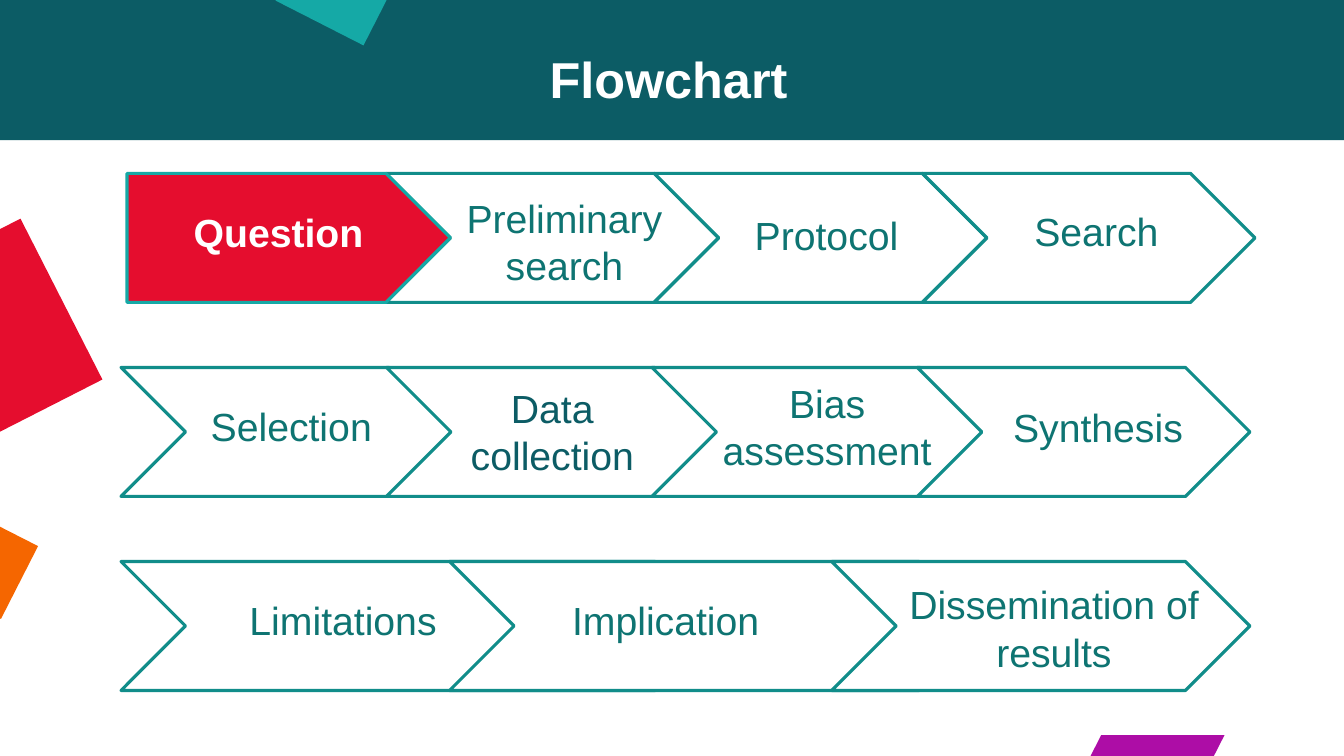
import pptx
import pptx.dml.color
import pptx.enum.shapes
import pptx.enum.text
import pptx.util

Cm = pptx.util.Cm
SHAPES = pptx.enum.shapes.MSO_SHAPE
TEXT = pptx.enum.text

COLORS = {
    "banner": "0C5C65",
    "red": "E50D2E",
    "purple": "AD0DA6",
    "orange": "F56600",
    "turquoise": "15A9A6",
    "outline": "118D8A",
    "label": "0E7472",
    "white": "FFFFFF",
}
FIRST_ROW_TOP, ROW_PITCH, STEP_HEIGHT = 4.37, 4.89, 3.25
STEP_WIDTH = 8.38


class FlowchartPage:
    """Holds the style and the current slide."""

    def __init__(self, deck, font="Arial"):
        self.font = font
        self.page = deck.slides.add_slide(deck.slide_layouts[5])

    def color(self, name):
        return pptx.dml.color.RGBColor.from_string(COLORS[name])

    def shape(self, kind, left, top, width, height, fill, line=None, rotation=0):
        shape = self.page.shapes.add_shape(
            kind, Cm(left), Cm(top), Cm(width), Cm(height))
        shape.shadow.inherit = False
        shape.rotation = rotation
        shape.fill.solid()
        shape.fill.fore_color.rgb = self.color(fill)
        if line:
            shape.line.color.rgb = self.color(line)
            shape.line.width = pptx.util.Pt(2.25)
        else:
            shape.line.fill.background()

    def format_text(self, box, text, size, color, bold=False):
        frame = box.text_frame
        frame.word_wrap = True
        frame.auto_size = TEXT.MSO_AUTO_SIZE.NONE
        frame.vertical_anchor = TEXT.MSO_ANCHOR.TOP
        para = frame.paragraphs[0]
        para.text = text
        para.alignment = TEXT.PP_ALIGN.CENTER
        for span in para.runs:
            span.font.name = self.font
            span.font.size = pptx.util.Pt(size)
            span.font.bold = bold
            span.font.color.rgb = self.color(color)
        return para

    def title(self, text, left, top, width, height):
        box = self.page.shapes.title
        box.left, box.top, box.width, box.height = map(Cm, (left, top, width, height))
        para = self.format_text(box, text, 36, "white", bold=True)
        para.line_spacing = 0.9
        # Bring the title in front of the banner
        box.element.getparent().append(box.element)

    def label(self, text, left, top, width, color="label", bold=False):
        box = self.page.shapes.add_textbox(Cm(left), Cm(top), Cm(width), Cm(1.45))
        self.format_text(box, text, 28, color, bold)

    def chevron(self, left, top, width):
        self.shape(SHAPES.CHEVRON, left, top, width, STEP_HEIGHT, "white", "outline")


def main():
    deck = pptx.Presentation()
    deck.slide_width, deck.slide_height = Cm(33.87), Cm(19.05)
    chart = FlowchartPage(deck)

    # Banner and tilted decorations
    chart.shape(SHAPES.RECTANGLE, 0, 0, 33.87, 3.53, "banner")
    for left, top, width, height, fill, rotation in (
        (-2.77, 6.3, 4.57, 4.55, "red", 333),
        (27.66, 17.65, 2.77, 2.77, "purple", 27),
        (-1.55, 13.16, 2.16, 2.06, "orange", 27),
        (7.39, -1.85, 2.49, 2.57, "turquoise", 27),
    ):
        chart.shape(SHAPES.RECTANGLE, left, top, width, height, fill, rotation=rotation)
    # White margin trims the top of the purple square
    chart.shape(SHAPES.RECTANGLE, 24.46, 15.95, 8.15, 2.57, "white")
    chart.title("Flowchart", 7.59, 1.27, 18.52, 1.04)

    first, second, third = (FIRST_ROW_TOP + row * ROW_PITCH for row in range(3))

    # Chevrons: evenly spaced in the first two rows, individual widths in the third
    for step in range(3):
        chart.chevron(9.73 + step * 6.76, first, STEP_WIDTH)
    for step in range(4):
        chart.chevron(3.05 + step * 6.69, second, STEP_WIDTH)
    for left, width in ((3.05, 15.09), (11.33, 13.46), (20.96, 10.54)):
        chart.chevron(left, third, width)

    # Highlighted starting step
    chart.shape(SHAPES.PENTAGON, 3.2, first, 8.15, STEP_HEIGHT, "red", "turquoise")
    chart.label("Question", 3.73, first + 0.76, 6.58, "white", bold=True)

    # Step labels: text, left, row top, offset in row, width
    for text, left, row_top, offset, width in (
        ("Preliminary search", 11.1, first, 0.41, 6.25),
        ("Protocol", 18.14, first, 0.84, 5.38),
        ("Search", 24.99, first, 0.74, 5.28),
        ("Selection", 4.37, second, 0.76, 5.94),
        ("Bias assessment", 17.91, second, 0.18, 5.87),
        ("Synthesis", 24.99, second, 0.79, 5.36),
        ("Limitations", 3.3, third, 0.74, 10.69),
        ("Implication", 11.43, third, 0.74, 10.69),
        ("Dissemination of results", 21.29, third, 0.36, 10.54),
    ):
        chart.label(text, left, row_top + offset, width)
    chart.label("Data\ncollection", 10.95, second + 0.3, 5.94, "banner")

    deck.save("out.pptx")


if __name__ == "__main__":
    main()
